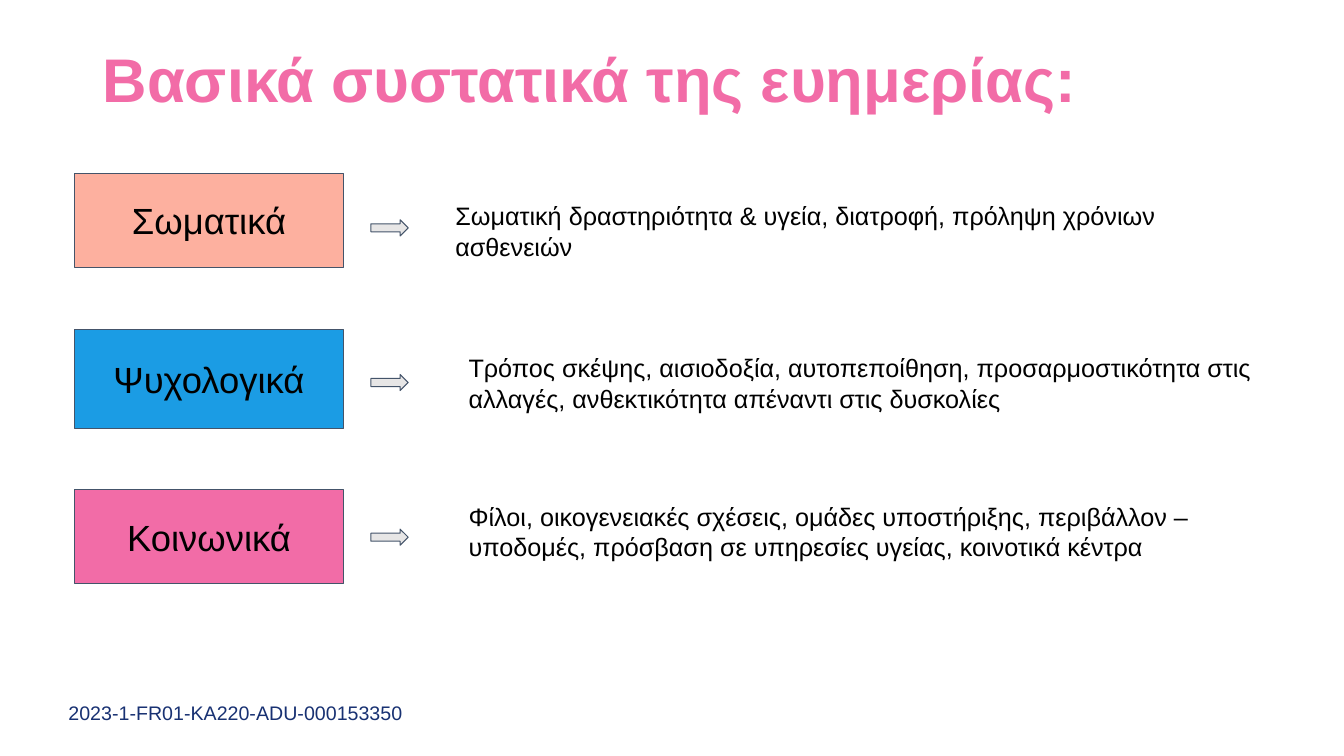
"""Build the slide on the basic components of well-being."""
import pptx
import pptx.dml.color
import pptx.enum.shapes
import pptx.enum.text
import pptx.util

Pt = pptx.util.Pt
SHAPES = pptx.enum.shapes.MSO_SHAPE
ANCHOR = pptx.enum.text.MSO_ANCHOR
ALIGN = pptx.enum.text.PP_ALIGN

ROW_LEFT = 53.3
LABEL_WIDTH = 192.2
ARROW_OFFSET = 211.7
FIRST_ARROW_TOP = 157
ARROW_PITCH = 110.5

COMPONENTS = [
    {"label": "Σωματικά", "fill": "FDB09F", "top": 123.8, "height": 67,
     "detail_left": 318.2, "detail_top": 136.1,
     "detail": "Σωματική δραστηριότητα & υγεία, διατροφή, πρόληψη χρόνιων ασθενειών"},
    {"label": "Ψυχολογικά", "fill": "1B9CE4", "top": 235.4, "height": 70.6,
     "detail_left": 327.6, "detail_top": 244.8,
     "detail": "Τρόπος σκέψης, αισιοδοξία, αυτοπεποίθηση, προσαρμοστικότητα στις "
               "αλλαγές, ανθεκτικότητα απέναντι στις δυσκολίες"},
    {"label": "Κοινωνικά", "fill": "F26CA7", "top": 349.9, "height": 67,
     "detail_left": 327.6, "detail_top": 350.6,
     "detail": "Φίλοι, οικογενειακές σχέσεις, ομάδες υποστήριξης, περιβάλλον – "
               "υποδομές, πρόσβαση σε υπηρεσίες υγείας, κοινοτικά κέντρα"},
]


def color(value):
    """Return the colour of a hex string."""
    return pptx.dml.color.RGBColor.from_string(value)


def write_text(shape, text, size, text_color="000000", bold=False, margin=7.2,
               vertical_margin=None, anchor=ANCHOR.TOP, align=ALIGN.LEFT, spacing=1.0):
    """Fill a shape with one formatted paragraph."""
    frame = shape.text_frame
    frame.text = text
    frame.word_wrap = True
    frame.vertical_anchor = anchor
    frame.margin_left = frame.margin_right = Pt(margin)
    frame.margin_top = frame.margin_bottom = Pt(
        margin if vertical_margin is None else vertical_margin)
    paragraph = frame.paragraphs[0]
    paragraph.alignment = align
    paragraph.line_spacing = spacing
    font = paragraph.runs[0].font
    font.name = "Arial"
    font.size = Pt(size)
    font.bold = bold
    font.color.rgb = color(text_color)


def add_outlined_shape(slide, kind, left, top, width, height, fill):
    """Add a filled shape with a thin slate outline."""
    shape = slide.shapes.add_shape(kind, Pt(left), Pt(top), Pt(width), Pt(height))
    shape.shadow.inherit = False
    shape.fill.solid()
    shape.fill.fore_color.rgb = color(fill)
    shape.line.color.rgb = color("44546A")
    shape.line.width = Pt(0.75)
    return shape


def add_text(slide, left, top, width, height, text, size, **style):
    """Add a text box with one formatted paragraph."""
    box = slide.shapes.add_textbox(Pt(left), Pt(top), Pt(width), Pt(height))
    write_text(box, text, size, **style)


def add_title(slide, left, top, width, height):
    """Add the slide heading."""
    add_text(slide, left, top, width, height, "Βασικά συστατικά της ευημερίας:", 44,
             text_color="F26CA7", bold=True, vertical_margin=6.7, spacing=0.9)


def add_component(slide, left, arrow_top, component):
    """Add a labelled box, its arrow and its description."""
    label = add_outlined_shape(slide, SHAPES.RECTANGLE, left, component["top"],
                               LABEL_WIDTH, component["height"], component["fill"])
    write_text(label, component["label"], 26, anchor=ANCHOR.MIDDLE, align=ALIGN.CENTER)
    add_outlined_shape(slide, SHAPES.RIGHT_ARROW, left + ARROW_OFFSET, arrow_top,
                       26.6, 11.5, "E7E6E6")
    add_text(slide, component["detail_left"], component["detail_top"], 593.3, 95.8,
             component["detail"], 18)


def add_footer(slide, left, top, width, height):
    """Add the project number."""
    add_text(slide, left, top, width, height, "2023-1-FR01-KA220-ADU-000153350", 14,
             text_color="183172", vertical_margin=3.6)


def main():
    """Create and save the presentation."""
    presentation = pptx.Presentation()
    presentation.slide_width = Pt(960)
    presentation.slide_height = Pt(540)
    slide = presentation.slides.add_slide(presentation.slide_layouts[6])
    add_footer(slide, 41.8, 496.8, 369.4, 24.5)
    add_title(slide, 66.2, 28.8, 828, 104.4)
    for index, component in enumerate(COMPONENTS):
        add_component(slide, ROW_LEFT, FIRST_ARROW_TOP + index * ARROW_PITCH, component)
    presentation.save("out.pptx")


if __name__ == "__main__":
    main()
